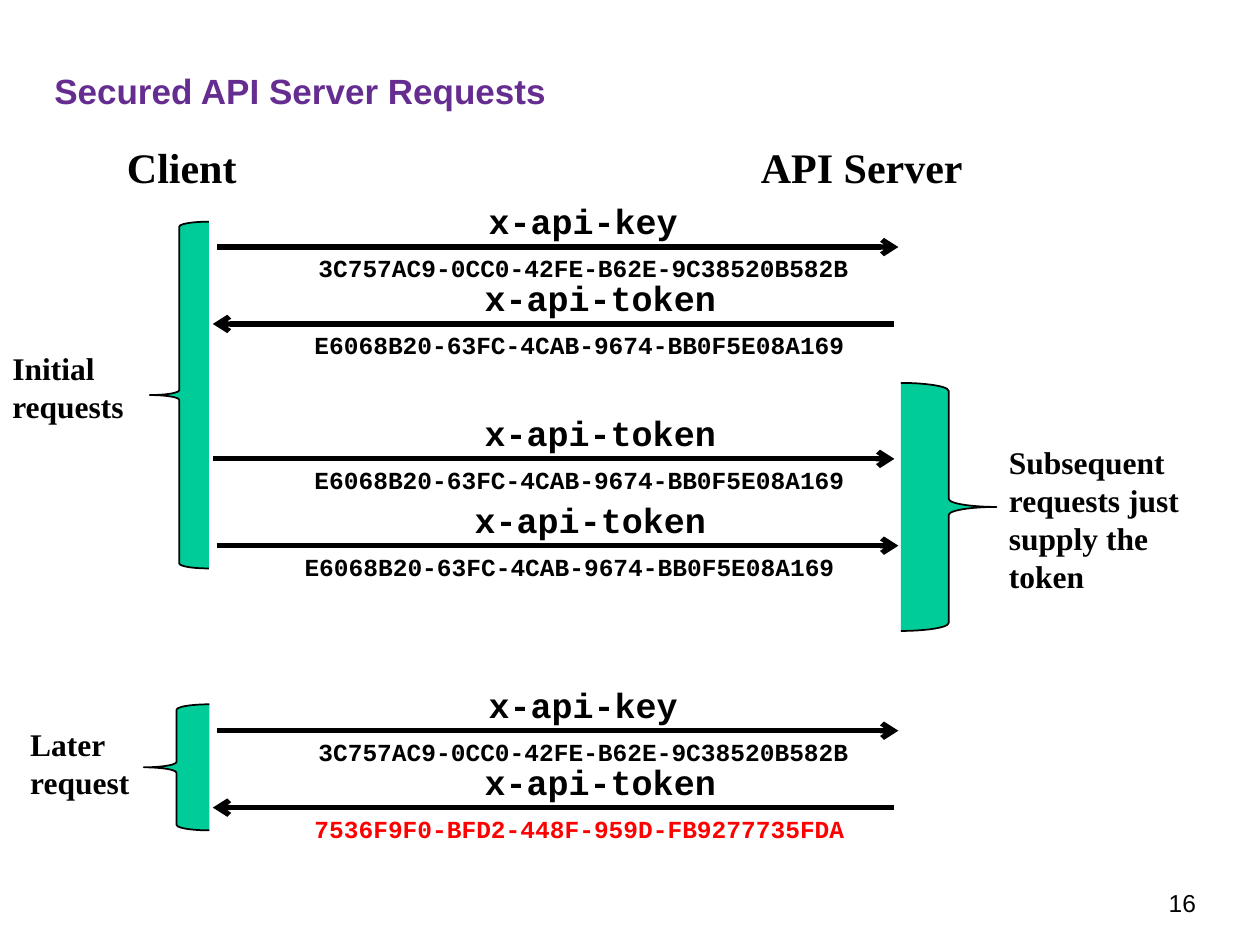
from lxml import etree
from pptx import Presentation
from pptx.dml.color import RGBColor
from pptx.enum.shapes import MSO_CONNECTOR, MSO_SHAPE
from pptx.enum.text import MSO_ANCHOR, MSO_AUTO_SIZE, PP_ALIGN
from pptx.oxml.ns import qn
from pptx.util import Cm, Pt

STRAIGHT = MSO_CONNECTOR.STRAIGHT
LEFT_BRACE, RIGHT_BRACE = MSO_SHAPE.LEFT_BRACE, MSO_SHAPE.RIGHT_BRACE
TOP = MSO_ANCHOR.TOP
NO_AUTO_SIZE, GROW = MSO_AUTO_SIZE.NONE, MSO_AUTO_SIZE.SHAPE_TO_FIT_TEXT
LEFT, RIGHT = PP_ALIGN.LEFT, PP_ALIGN.RIGHT

BLACK = RGBColor(0x00, 0x00, 0x00)
PURPLE = RGBColor(0x66, 0x2D, 0x91)
GREEN = RGBColor(0x00, 0xCC, 0x99)
RED = RGBColor(0xFF, 0x00, 0x00)

SANS, SERIF, MONO = "Arial", "Times New Roman", "Courier New"

KEY = "3C757AC9-0CC0-42FE-B62E-9C38520B582B"
TOKEN = "E6068B20-63FC-4CAB-9674-BB0F5E08A169"
NEW_TOKEN = "7536F9F0-BFD2-448F-959D-FB9277735FDA"

LABEL_WIDTHS = {"x-api-key": 4.37, "x-api-token": 5.21}
ARROW_WIDTH = 13.74

# Header, left, top, end of the line with the arrowhead, value, colour, text shift
MESSAGES = [
    ("x-api-key", 4.37, 4.98, "tailEnd", KEY, BLACK, 0),
    ("x-api-token", 4.29, 6.53, "headEnd", TOKEN, BLACK, 0),
    ("x-api-token", 4.29, 9.25, "tailEnd", TOKEN, BLACK, 0),
    ("x-api-token", 4.37, 11, "tailEnd", TOKEN, BLACK, -0.28),
    ("x-api-key", 4.37, 14.73, "tailEnd", KEY, BLACK, 0),
    ("x-api-token", 4.29, 16.28, "headEnd", NEW_TOKEN, RED, 0),
]

# Brace shape, brace box, note, note box
PHASES = [
    (LEFT_BRACE, (3.02, 4.47, 1.19, 6.99), "Initial requests", (0, 6.91, 3.02, 1.8)),
    (RIGHT_BRACE, (18.16, 7.72, 1.93, 5),
     "Subsequent requests just supply the token", (20.09, 8.81, 4.83, 3.33)),
    (LEFT_BRACE, (2.9, 14.2, 1.32, 2.54), "Later request", (0.36, 14.5, 2.67, 1.8)),
]


def style_paragraph(paragraph, name, size, color, bold=True, alignment=LEFT):
    paragraph.alignment = alignment
    font = paragraph.font
    font.name, font.size, font.bold = name, Pt(size), bold
    font.color.rgb = color


def add_text(shapes, text, box, name, size, color=BLACK, wrap=False,
             bold=True, alignment=LEFT):
    shape = shapes.add_textbox(*map(Cm, box))
    frame = shape.text_frame
    frame.word_wrap = wrap
    frame.auto_size = GROW
    frame.text = text
    style_paragraph(frame.paragraphs[0], name, size, color, bold, alignment)


def add_title(slide, text, box):
    title = slide.shapes.title
    title.left, title.top, title.width, title.height = map(Cm, box)
    frame = title.text_frame
    frame.text = text
    frame.vertical_anchor = TOP
    frame.auto_size = NO_AUTO_SIZE
    style_paragraph(frame.paragraphs[0], SANS, 20, PURPLE)


def add_message(slide, header, left, top, arrow_end, value, color, shift):
    """Arrow with the header name above it and the header value below it."""
    shapes = slide.shapes.add_group_shape().shapes
    arrow = shapes.add_connector(STRAIGHT, Cm(left), Cm(top),
                                 Cm(left + ARROW_WIDTH), Cm(top))
    arrow.line.color.rgb = BLACK
    arrow.line.width = Pt(3)
    properties = arrow.element.spPr
    etree.SubElement(properties.find(qn("a:ln")), qn(f"a:{arrow_end}"), type="arrow")
    etree.SubElement(properties, qn("a:effectLst"))

    label_box = (left + 5.23 + shift, top - 1.08, LABEL_WIDTHS[header], 1.12)
    add_text(shapes, header, label_box, MONO, 20)
    value_box = (left + 1.8 + shift, top, 11.25, 0.86)
    add_text(shapes, value, value_box, MONO, 14, color)


def add_phase(slide, brace_shape, brace_box, note, note_box):
    """Brace around a run of messages, with a note at its point."""
    brace = slide.shapes.add_shape(brace_shape, *map(Cm, brace_box))
    brace.shadow.inherit = False
    brace.fill.solid()
    brace.fill.fore_color.rgb = GREEN
    brace.line.color.rgb = BLACK
    brace.line.width = Pt(1)
    add_text(slide.shapes, note, note_box, SERIF, 18, wrap=True)


def main():
    presentation = Presentation()
    presentation.slide_width, presentation.slide_height = Cm(25.4), Cm(19.05)
    slide = presentation.slides.add_slide(presentation.slide_layouts[5])

    add_title(slide, "Secured API Server Requests", (0.84, 1.27, 17.35, 2.34))

    # Column headings
    add_text(slide.shapes, "Client", (2.31, 2.72, 2.74, 1.27), SERIF, 24)
    add_text(slide.shapes, "API Server", (15.09, 2.72, 4.62, 1.27), SERIF, 24)

    for message in MESSAGES:
        add_message(slide, *message)
    for phase in PHASES:
        add_phase(slide, *phase)

    # Slide number
    add_text(slide.shapes, "16", (18.21, 17.78, 6.15, 0.84), SANS, 14,
             wrap=True, bold=False, alignment=RIGHT)

    presentation.save("out.pptx")


if __name__ == "__main__":
    main()
